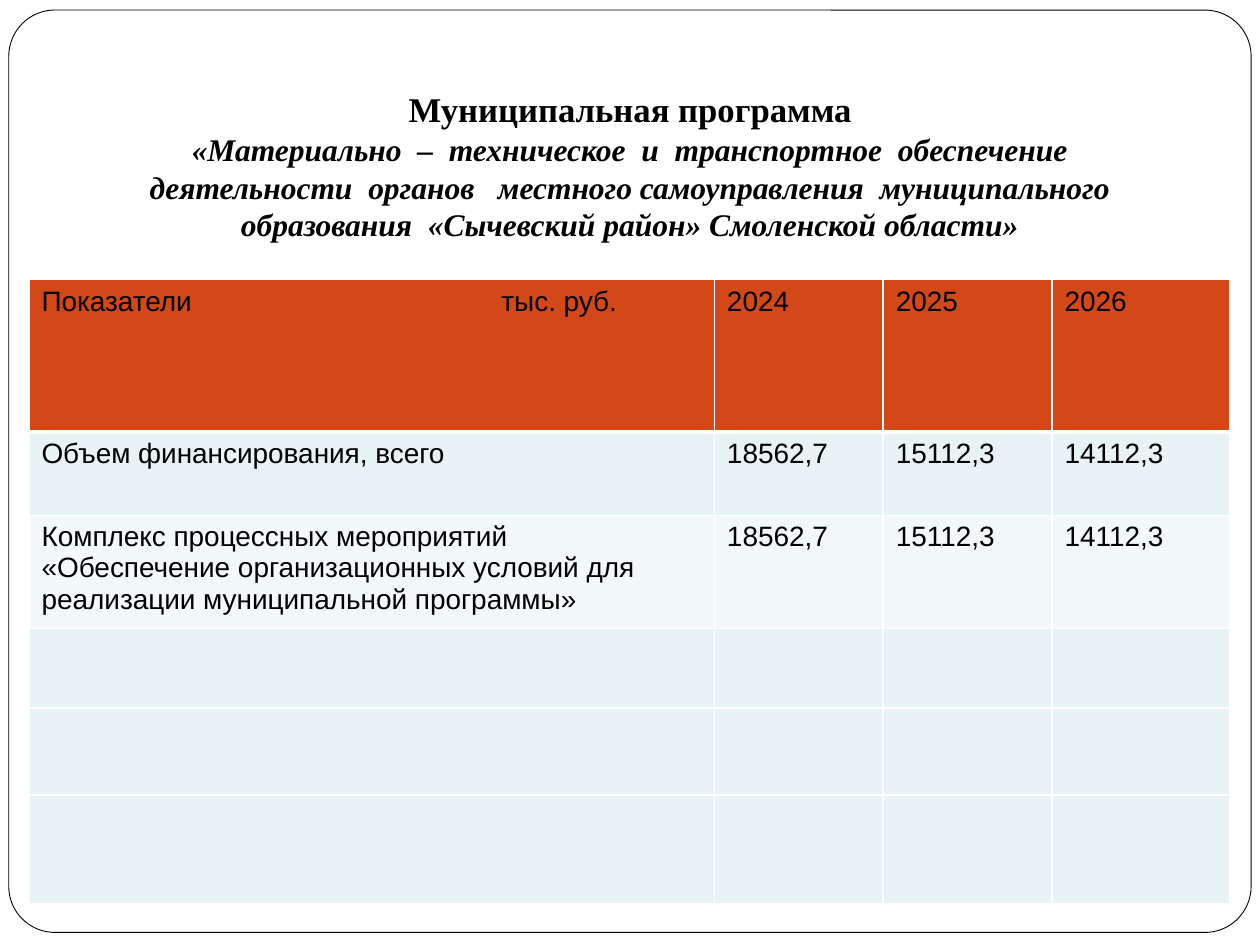
from pptx import Presentation
from pptx.dml.color import RGBColor
from pptx.enum import shapes, text
from pptx.oxml import ns, xmlchemy
from pptx.util import Inches, Pt

COLORS = {"white": "FFFFFF", "black": "000000", "header": "D34817",
          "band": "E7F3F4", "light": "F3F9FA"}
TITLE = [
    ("Муниципальная программа", 19.8, False),
    ("«Материально  –  техническое  и  транспортное  обеспечение", 18, True),
    ("деятельности  органов   местного самоуправления  муниципального", 18, True),
    ("образования  «Сычевский район» Смоленской области»", 18, True),
]
AMOUNTS = ["18562,7", "15112,3", "14112,3"]
ROWS = [
    (1.21, "header", ["Показатели\tтыс. руб.", "2024", "2025", "2026"]),
    (0.66, "band", ["Объем финансирования, всего"] + AMOUNTS),
    (0.74, "light", ["Комплекс процессных мероприятий «Обеспечение организационных "
                     "условий для реализации муниципальной программы»"] + AMOUNTS),
    (0.63, "band", [""] * 4),
    (0.69, "band", [""] * 4),
    (0.86, "band", [""] * 4),
]
COLUMNS = [5.44, 1.34, 1.34, 1.41]


def rgb(name):
    return RGBColor.from_string(COLORS[name])


def add_frame(s, x, y, w, h):
    sp = s.shapes.add_shape(shapes.MSO_SHAPE.ROUNDED_RECTANGLE,
                            Inches(x), Inches(y), Inches(w), Inches(h))
    sp.adjustments[0] = 0.05
    sp.shadow.inherit = False
    sp.fill.solid()
    sp.fill.fore_color.rgb = rgb("white")
    sp.line.color.rgb = rgb("black")
    sp.line.width = Pt(0.5)


def add_title(s, x, y, w, h):
    tf = s.shapes.add_textbox(Inches(x), Inches(y), Inches(w), Inches(h)).text_frame
    tf.word_wrap = True
    tf.vertical_anchor = text.MSO_ANCHOR.BOTTOM
    tf.margin_bottom = Inches(0.1)
    p = tf.paragraphs[0]
    p.alignment = text.PP_ALIGN.CENTER
    for i, (line, size, italic) in enumerate(TITLE):
        if i:
            p.add_line_break()
        r = p.add_run()
        r.text = line
        r.font.name = "Times New Roman"
        r.font.size = Pt(size)
        r.font.bold = True
        r.font.italic = italic
        r.font.color.rgb = rgb("black")


def add_tab_stop(p, pos):
    tabs = xmlchemy.OxmlElement("a:tabLst")
    tab = xmlchemy.OxmlElement("a:tab")
    tab.set("pos", str(Inches(pos)))
    tab.set("algn", "l")
    tabs.append(tab)
    p._p.get_or_add_pPr().append(tabs)


def set_borders(cell, widths):
    tc_pr = cell._tc.get_or_add_tcPr()
    for i, (side, width) in enumerate(widths.items()):
        ln = xmlchemy.OxmlElement(f"a:ln{side}")
        ln.set("w", str(Pt(width)))
        fill = xmlchemy.OxmlElement("a:solidFill")
        color = xmlchemy.OxmlElement("a:srgbClr")
        color.set("val", COLORS["white"])
        fill.append(color)
        ln.append(fill)
        tc_pr.insert(i, ln)


def fill_cell(cell, value, color):
    cell.fill.solid()
    cell.fill.fore_color.rgb = rgb(color)
    p = cell.text_frame.paragraphs[0]
    if value:
        p.add_run().text = value
    if "\t" in value:
        add_tab_stop(p, 3.65)
    p.font.name = "Arial"
    p.font.size = Pt(16)
    p.font.color.rgb = rgb("black")


def add_budget_table(s, x, y, w, h):
    table = s.shapes.add_table(len(ROWS), len(COLUMNS), Inches(x), Inches(y),
                               Inches(w), Inches(h)).table
    for column, width in zip(table.columns, COLUMNS):
        column.width = Inches(width)
    for i, (height, color, values) in enumerate(ROWS):
        table.rows[i].height = Inches(height)
        borders = {"L": 1, "R": 1, "T": 3 if i == 1 else 1, "B": 3 if i == 0 else 1}
        for j, value in enumerate(values):
            cell = table.cell(i, j)
            fill_cell(cell, value, color)
            set_borders(cell, borders)


def main():
    prs = Presentation()
    prs.slide_width, prs.slide_height = Inches(10), Inches(7.5)
    s = prs.slides.add_slide(prs.slide_layouts[6])
    add_frame(s, 0.07, 0.08, 9.86, 7.32)
    add_title(s, 0.5, 0.3, 9, 1.73)
    add_budget_table(s, 0.23, 2.22, 9.53, 4.79)
    prs.save("out.pptx")


if __name__ == "__main__":
    main()
